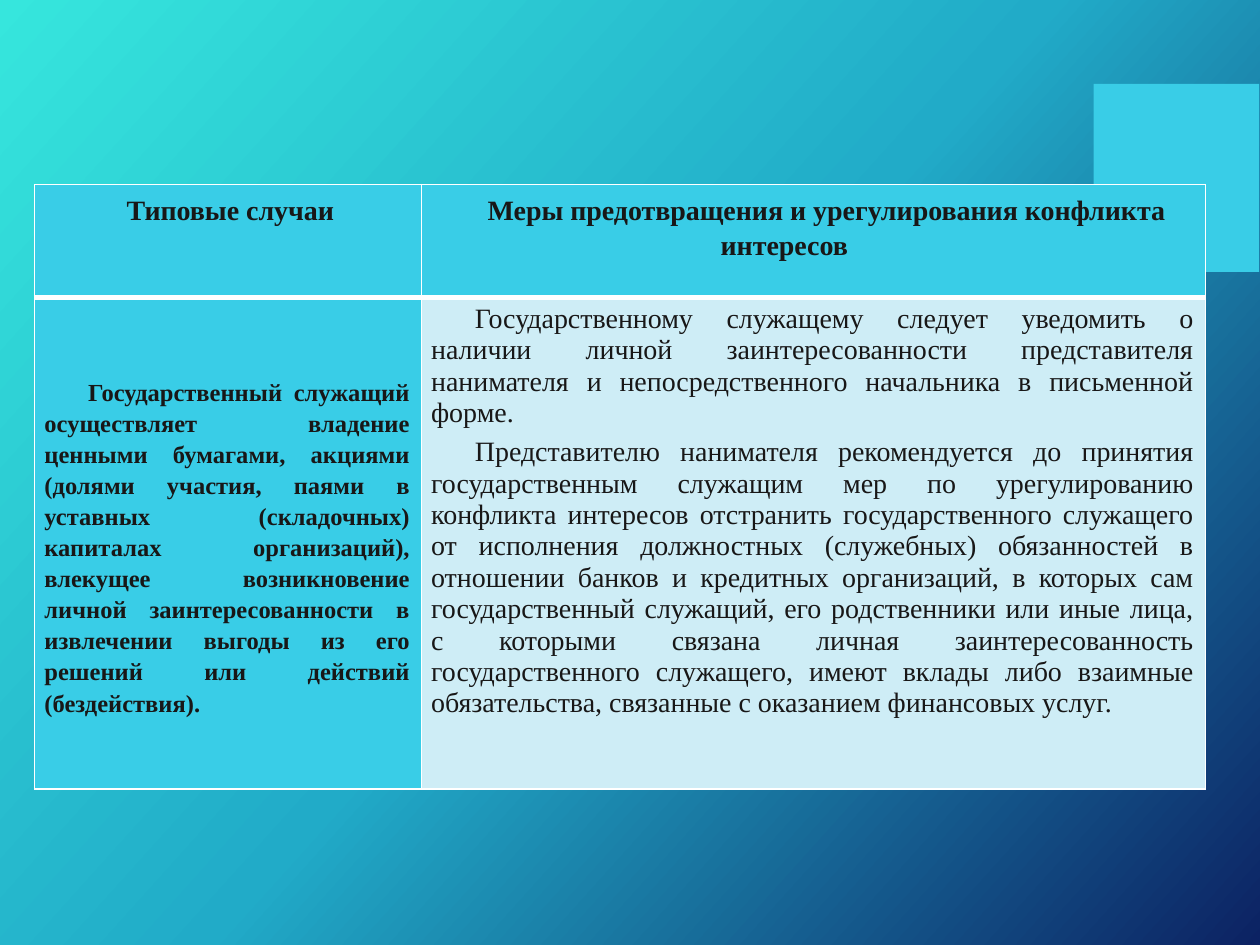
from copy import deepcopy

from lxml import etree
from pptx import Presentation
from pptx import util as u
from pptx.dml.color import RGBColor
from pptx.enum import shapes, text
from pptx.oxml.ns import qn

Pt = u.Pt
CYAN = RGBColor(0x39, 0xCD, 0xE7)
PALE = RGBColor(0xCE, 0xED, 0xF6)
INK = RGBColor(0x18, 0x17, 0x17)
WHITE = RGBColor(0xFF, 0xFF, 0xFF)
GRADIENT = [
    (0, RGBColor(0x36, 0xE6, 0xDD)),
    (0.5, RGBColor(0x21, 0xAB, 0xC8)),
    (1, RGBColor(0x0C, 0x22, 0x63)),
]
CENTER = text.PP_ALIGN.CENTER
JUSTIFY = text.PP_ALIGN.JUSTIFY
TOP = text.MSO_ANCHOR.TOP
MIDDLE = text.MSO_ANCHOR.MIDDLE


def add_borders(cell, bottom_width):
    properties = cell._tc.get_or_add_tcPr()
    widths = [("a:lnL", 1), ("a:lnR", 1), ("a:lnT", 1), ("a:lnB", bottom_width)]
    for position, (tag, width) in enumerate(widths):
        line = etree.Element(qn(tag), w=str(Pt(width)))
        fill = etree.SubElement(line, qn("a:solidFill"))
        etree.SubElement(fill, qn("a:srgbClr"), val=str(WHITE))
        properties.insert(position, line)


presentation = Presentation()
presentation.slide_width = Pt(720)
presentation.slide_height = Pt(540)
slide = presentation.slides.add_slide(presentation.slide_layouts[6])

background = slide.background.fill
background.gradient()
background.gradient_angle = 318
stop_list = next(slide._element.iter(qn("a:gsLst")))
stop_list.insert(1, deepcopy(stop_list[0]))
for stop, (position, color) in zip(background.gradient_stops, GRADIENT):
    stop.position = position
    stop.color.rgb = color

accent = slide.shapes.add_shape(
    shapes.MSO_SHAPE.RECTANGLE, Pt(625), Pt(48), Pt(94.5), Pt(107.5)
)
accent.shadow.inherit = False
accent.fill.solid()
accent.fill.fore_color.rgb = CYAN
accent.line.fill.background()

column_widths = [221, 448]
row_heights = [64.5, 281]
table = slide.shapes.add_table(
    2, 2, Pt(19.8), Pt(105.5), Pt(sum(column_widths)), Pt(sum(row_heights))
).table
for column, width in zip(table.columns, column_widths):
    column.width = Pt(width)
for row, height in zip(table.rows, row_heights):
    row.height = Pt(height)

header_style = (CYAN, TOP, CENTER, 3, 13, 1.15, 0, 16, True)
case_style = (CYAN, MIDDLE, JUSTIFY, 0, 25, 1.15, 0, 14, True)
measure_style = (PALE, TOP, JUSTIFY, 0, 25, 1.01, 4.3, 16, False)
cells = [
    (0, 0, header_style, ["Типовые случаи \t"]),
    (0, 1, header_style, [
        "Меры предотвращения и урегулирования конфликта интересов \t",
    ]),
    (1, 0, case_style, [
        "Государственный служащий осуществляет владение ценными бумагами, "
        "акциями (долями участия, паями в уставных (складочных) капиталах "
        "организаций), влекущее возникновение личной заинтересованности в "
        "извлечении выгоды из его решений или действий (бездействия).",
    ]),
    (1, 1, measure_style, [
        "Государственному служащему следует уведомить о наличии личной "
        "заинтересованности представителя нанимателя и непосредственного "
        "начальника в письменной форме. ",
        "Представителю нанимателя рекомендуется до принятия государственным "
        "служащим мер по урегулированию конфликта интересов отстранить "
        "государственного служащего от исполнения должностных (служебных) "
        "обязанностей в отношении банков и кредитных организаций, в которых "
        "сам государственный служащий, его родственники или иные лица, с "
        "которыми связана личная заинтересованность государственного "
        "служащего, имеют вклады либо взаимные обязательства, связанные с "
        "оказанием финансовых услуг.",
    ]),
]

for row, column, style, paragraphs in cells:
    color, anchor, alignment, margin, indent, spacing, after, size, bold = style
    cell = table.cell(row, column)
    cell.fill.solid()
    cell.fill.fore_color.rgb = color
    cell.vertical_anchor = anchor
    cell.margin_left = Pt(5.6)
    cell.margin_top = Pt(3.3)
    cell.margin_right = Pt(6.6)
    cell.margin_bottom = Pt(0)
    add_borders(cell, 3 if row == 0 else 1)
    cell.text_frame.text = "\n".join(paragraphs)
    for paragraph in cell.text_frame.paragraphs:
        paragraph.alignment = alignment
        paragraph.line_spacing = spacing
        paragraph.space_after = Pt(after)
        properties = paragraph._p.get_or_add_pPr()
        properties.set("marL", str(Pt(margin)))
        properties.set("indent", str(Pt(indent)))
        if (row, column) == (0, 0):
            tabs = etree.SubElement(properties, qn("a:tabLst"))
            etree.SubElement(tabs, qn("a:tab"), pos=str(Pt(165)), algn="l")
        for run in paragraph.runs:
            run.font.name = "Times New Roman"
            run.font.size = Pt(size)
            run.font.bold = bold
            run.font.color.rgb = INK

presentation.save("out.pptx")
